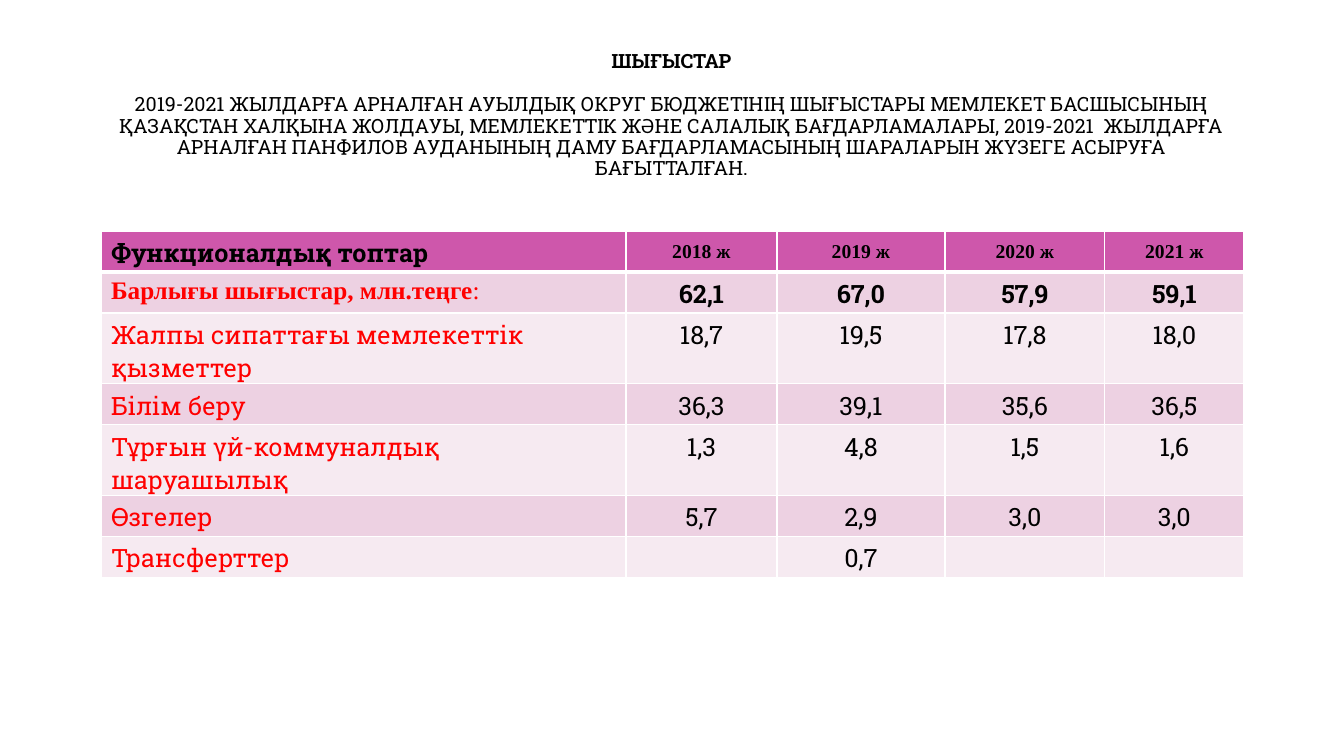
from lxml import etree
from pptx import Presentation
from pptx import util as u
from pptx.dml.color import RGBColor
from pptx.enum import text
from pptx.oxml import ns

PX = 914400 / 100.8
SLAB = "Roboto Slab"
TIMES = "Times New Roman"
BLACK = RGBColor(0x00, 0x00, 0x00)
RED = RGBColor(0xFF, 0x00, 0x00)
HEADER = RGBColor(0xCE, 0x57, 0xAB)
BANDS = (RGBColor(0xF6, 0xEA, 0xF1), RGBColor(0xED, 0xD1, 0xE2))
BORDER = "FFFFFF"

HEADING = "ШЫҒЫСТАР"
INTRO = (
    "2019-2021 ЖЫЛДАРҒА АРНАЛҒАН АУЫЛДЫҚ ОКРУГ БЮДЖЕТІНІҢ ШЫҒЫСТАРЫ "
    "МЕМЛЕКЕТ БАСШЫСЫНЫҢ ҚАЗАҚСТАН ХАЛҚЫНА ЖОЛДАУЫ, МЕМЛЕКЕТТІК ЖӘНЕ "
    "САЛАЛЫҚ БАҒДАРЛАМАЛАРЫ, 2019-2021  ЖЫЛДАРҒА АРНАЛҒАН ПАНФИЛОВ "
    "АУДАНЫНЫҢ ДАМУ БАҒДАРЛАМАСЫНЫҢ ШАРАЛАРЫН ЖҮЗЕГЕ АСЫРУҒА БАҒЫТТАЛҒАН."
)
COL_WIDTHS = (525, 151, 168, 160, 139)
ROW_HEIGHTS = (41, 41, 62, 41, 41, 41, 41)
ROWS = (
    ("Функционалдық топтар", "2018 ж", "2019 ж", "2020 ж", "2021 ж"),
    ("Барлығы шығыстар, млн.теңге", "62,1", "67,0", "57,9", "59,1"),
    ("Жалпы сипаттағы мемлекеттік қызметтер", "18,7", "19,5", "17,8", "18,0"),
    ("Білім беру", "36,3", "39,1", "35,6", "36,5"),
    ("Тұрғын үй-коммуналдық шаруашылық", "1,3", "4,8", "1,5", "1,6"),
    ("Өзгелер", "5,7", "2,9", "3,0", "3,0"),
    ("Трансферттер", "", "0,7", "", ""),
)


def px(n):
    return u.Emu(round(n * PX))


def set_font(p, name, size, color, bold):
    p.font.name = name
    p.font.size = u.Pt(size)
    p.font.color.rgb = color
    p.font.bold = bold


def add_title(s):
    sp = s.shapes.add_textbox(px(101), px(39), px(1141), px(174))
    tf = sp.text_frame
    tf.word_wrap = True
    tf.vertical_anchor = text.MSO_ANCHOR.MIDDLE
    tf.margin_bottom = px(26)
    tf.text = f"{HEADING}\n{INTRO}"
    for p, bold in zip(tf.paragraphs, (True, False)):
        p.alignment = text.PP_ALIGN.CENTER
        p.line_spacing = 0.9
        set_font(p, SLAB, 14, BLACK, bold)
    tf.paragraphs[1].space_before = u.Pt(16)


def set_borders(cell, is_header):
    widths = {"lnL": 1, "lnR": 1, "lnB": 3 if is_header else 1}
    if is_header:
        widths = {"lnL": 1, "lnR": 1, "lnT": 1, "lnB": 3}
    tc_pr = cell._tc.get_or_add_tcPr()
    for i, (side, width) in enumerate(widths.items()):
        ln = etree.Element(ns.qn(f"a:{side}"), w=str(u.Pt(width)))
        fill = etree.SubElement(ln, ns.qn("a:solidFill"))
        etree.SubElement(fill, ns.qn("a:srgbClr"), val=BORDER)
        tc_pr.insert(i, ln)


def fill_cell(cell, value, row, col):
    is_header, is_label = row == 0, col == 0
    cell.fill.solid()
    cell.fill.fore_color.rgb = HEADER if is_header else BANDS[row % 2]
    set_borders(cell, is_header)
    is_year = is_header and not is_label
    if is_year:
        cell.vertical_anchor = text.MSO_ANCHOR.MIDDLE
        cell.margin_left = cell.margin_right = px(7)
        cell.margin_top = cell.margin_bottom = 0
    p = cell.text_frame.paragraphs[0]
    if not is_label:
        p.alignment = text.PP_ALIGN.CENTER
    is_total_label = row == 1 and is_label
    set_font(
        p,
        TIMES if is_year or is_total_label else SLAB,
        14 if is_year else 18,
        RED if is_label and not is_header else BLACK,
        row < 2,
    )
    if value:
        p.add_run().text = value
    if is_total_label:
        r = p.add_run()
        r.text = ":"
        r.font.bold = False


def add_budget_table(s):
    frame = s.shapes.add_table(
        len(ROWS), len(COL_WIDTHS), px(101), px(231),
        px(sum(COL_WIDTHS)), px(sum(ROW_HEIGHTS)),
    )
    table = frame.table
    for column, width in zip(table.columns, COL_WIDTHS):
        column.width = px(width)
    for i, (height, values) in enumerate(zip(ROW_HEIGHTS, ROWS)):
        table.rows[i].height = px(height)
        for j, value in enumerate(values):
            fill_cell(table.cell(i, j), value, i, j)


def main():
    prs = Presentation()
    prs.slide_width, prs.slide_height = px(1344), px(756)
    s = prs.slides.add_slide(prs.slide_layouts[6])
    add_title(s)
    add_budget_table(s)
    prs.save("out.pptx")


if __name__ == "__main__":
    main()
